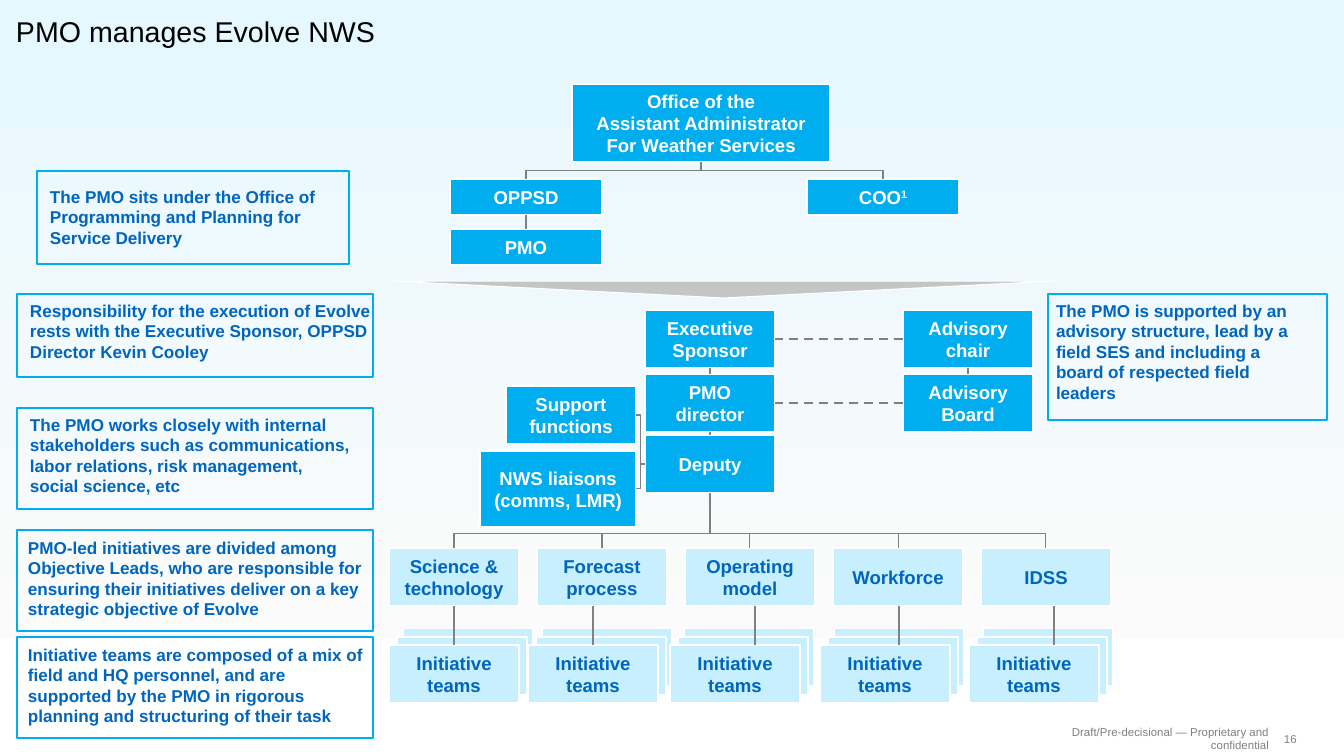
from lxml import etree
from pptx import Presentation
from pptx.dml.color import RGBColor
from pptx.enum.dml import MSO_LINE
from pptx.enum.shapes import MSO_CONNECTOR, MSO_SHAPE
from pptx.enum.text import MSO_ANCHOR, PP_ALIGN
from pptx.oxml.ns import qn
from pptx.util import Pt

RECTANGLE, TRIANGLE = MSO_SHAPE.RECTANGLE, MSO_SHAPE.ISOSCELES_TRIANGLE
STRAIGHT, ELBOW = MSO_CONNECTOR.STRAIGHT, MSO_CONNECTOR.ELBOW
LEFT, CENTER, RIGHT = PP_ALIGN.LEFT, PP_ALIGN.CENTER, PP_ALIGN.RIGHT
TOP, MIDDLE = MSO_ANCHOR.TOP, MSO_ANCHOR.MIDDLE
TOP_SIDE, LEFT_SIDE, BOTTOM_SIDE, RIGHT_SIDE = range(4)
EMU_PER_PX = 8895
BLUE, PALE, NAVY, GREY = "00ADEF", "C8EFFE", "0065BD", "808080"
WHITE, BLACK, SILVER = "FFFFFF", "000000", "C5C5C5"
BACKDROP_STOPS = ["FBFBFB", "E6F8FF"]

TITLE = "PMO manages Evolve NWS"
FOOTERS = [
    ("16", (1284, 732, 14, 13), LEFT),
    ("Draft/Pre-decisional — Proprietary and confidential", (1011, 732, 258, 13), RIGHT),
]
CALLOUTS = [
    ("The PMO sits under the Office of Programming and Planning for Service Delivery",
     (37, 171, 312, 93), (50, 186, 286, 65)),
    ("Responsibility for the execution of Evolve rests with the Executive Sponsor, "
     "OPPSD Director Kevin Cooley",
     (17, 294, 356, 83), (30, 300, 343, 65)),
    ("The PMO is supported by an advisory structure, lead by a field SES and including "
     "a board of respected field leaders",
     (1048, 294, 279, 126), (1056, 300, 255, 107)),
    ("The PMO works closely with internal stakeholders such as communications, labor "
     "relations, risk management, social science, etc",
     (17, 408, 356, 101), (30, 414, 325, 86)),
    ("PMO-led initiatives are divided among Objective Leads, who are responsible for "
     "ensuring their initiatives deliver on a key strategic objective of Evolve",
     (17, 530, 356, 101), (28, 537, 342, 86)),
    ("Initiative teams are composed of a mix of field and HQ personnel, and are supported "
     "by the PMO in rigorous planning and structuring of their task",
     (17, 637, 356, 101), (28, 644, 342, 86)),
]
NODE_WIDTH, NODE_HEIGHT = 130, 58
NODES = {
    "office": ("Office of the\nAssistant Administrator\nFor Weather Services", (572, 84, 258, 78)),
    "oppsd": ("OPPSD", (450, 179, 152, 36)),
    "coo": ("COO", (807, 179, 152, 36)),
    "pmo": ("PMO", (450, 229, 152, 36)),
    "sponsor": ("Executive Sponsor", (645, 310, NODE_WIDTH, NODE_HEIGHT)),
    "chair": ("Advisory chair", (903, 310, NODE_WIDTH, NODE_HEIGHT)),
    "director": ("PMO director", (645, 374, NODE_WIDTH, NODE_HEIGHT)),
    "board": ("Advisory Board", (903, 374, NODE_WIDTH, NODE_HEIGHT)),
    "deputy": ("Deputy", (645, 435, NODE_WIDTH, NODE_HEIGHT)),
    "support": ("Support functions", (506, 386, NODE_WIDTH, NODE_HEIGHT)),
    "liaisons": ("NWS liaisons (comms, LMR)", (480, 451, 156, 76)),
}
COO_MARK = "1"
DOWN_LINKS = [("oppsd", "pmo", 0.75), ("sponsor", "director", 1.5),
              ("director", "deputy", 1.5), ("chair", "board", 1.5)]
DASHED_LINKS = [("chair", "sponsor"), ("board", "director")]
OBJECTIVES = ["Science & technology", "Forecast process", "Operating model", "Workforce", "IDSS"]
OBJECTIVE_LEFT, OBJECTIVE_TOP, OBJECTIVE_STEP = 389, 548, 148
TEAM_LABEL = "Initiative teams"
TEAM_TOP = 645
TEAMS = [(389, 454), (528, 593), (670, 755), (820, 899), (969, 1054)]
STACK_OFFSETS = [(14, -17), (8, -8)]


def px(*lengths):
    return [round(length * EMU_PER_PX) for length in lengths]


def color(value):
    return RGBColor.from_string(value)


def apply(target, values):
    for name, value in values.items():
        setattr(target, name, value)


def format_run(run, size, ink, bold):
    apply(run.font, {"name": "Arial", "size": Pt(size), "bold": bold})
    run.font.color.rgb = color(ink)


def write(shape, text, size, ink, bold=False, align=LEFT, anchor=TOP, margin=0):
    frame = shape.text_frame
    inset = px(margin)[0]
    apply(frame, {"word_wrap": True, "vertical_anchor": anchor, "margin_left": inset,
                  "margin_right": inset, "margin_top": inset, "margin_bottom": inset})
    frame.text = text
    for paragraph in frame.paragraphs:
        paragraph.alignment = align
        for run in paragraph.runs:
            format_run(run, size, ink, bold)


def add_label(box, text, size, ink, **options):
    write(slide.shapes.add_textbox(*px(*box)), text, size, ink, **options)


def add_box(box, fill=None, line=WHITE, width=1, kind=RECTANGLE):
    shape = slide.shapes.add_shape(kind, *px(*box))
    shape.shadow.inherit = False
    if fill:
        shape.fill.solid()
        shape.fill.fore_color.rgb = color(fill)
    else:
        shape.fill.background()
    shape.line.color.rgb = color(line)
    shape.line.width = Pt(width)
    return shape


def add_node(box, text, fill, ink):
    shape = add_box(box, fill)
    write(shape, text, 13, ink, bold=True, align=CENTER, anchor=MIDDLE, margin=7)
    return shape


def add_line(kind, start, end, width):
    connector = slide.shapes.add_connector(kind, *px(*start, *end))
    connector.line.color.rgb = color(GREY)
    connector.line.width = Pt(width)
    etree.SubElement(connector._element.spPr, qn("a:effectLst"))
    return connector


def side(shape, index):
    x, y = shape.left + shape.width / 2, shape.top + shape.height / 2
    points = [(x, shape.top), (shape.left, y), (x, shape.top + shape.height),
              (shape.left + shape.width, y)]
    return tuple(value / EMU_PER_PX for value in points[index])


def join(first, first_side, second, second_side, width):
    connector = add_line(STRAIGHT, side(first, first_side), side(second, second_side), width)
    connector.begin_connect(first, first_side)
    connector.end_connect(second, second_side)
    return connector


def branch_down(parent, child, bend):
    (x1, y1), (x2, y2) = side(parent, BOTTOM_SIDE), side(child, TOP_SIDE)
    middle_x, middle_y = (x1 + x2) / 2, (y1 + y2) / 2
    reach, drop = abs(x2 - x1) / 2, (y2 - y1) / 2
    turn, rotation = (drop, 270) if x2 > x1 else (-drop, 90)
    connector = add_line(ELBOW, (middle_x + turn, middle_y - reach),
                         (middle_x - turn, middle_y + reach), 0.75)
    properties = connector._element.spPr
    properties.find(qn("a:xfrm")).set("rot", str(rotation * 60000))
    guides = properties.find(qn("a:prstGeom")).find(qn("a:avLst"))
    etree.SubElement(guides, qn("a:gd"), name="adj1", fmla=f"val {round(bend * 100000)}")


presentation = Presentation()
presentation.slide_width, presentation.slide_height = px(1344, 756)
slide = presentation.slides.add_slide(presentation.slide_layouts[6])

backdrop = add_box((0, 0, 1344, 639))
backdrop.line.fill.background()
backdrop.fill.gradient()
backdrop.fill.gradient_angle = 90
for stop, tint in zip(backdrop.fill.gradient_stops, BACKDROP_STOPS):
    stop.color.rgb = color(tint)

for text, box, align in FOOTERS:
    add_label(box, text, 8, GREY, align=align, anchor=MIDDLE)
add_label((6, 14, 1292, 35), TITLE, 20, BLACK, anchor=MIDDLE, margin=10)

divider = add_box((393, 281, 661, 17), SILVER, width=0.75, kind=TRIANGLE)
divider.rotation = 180
for text, frame_box, text_box in CALLOUTS:
    add_box(frame_box, line=BLUE, width=1.5)
    add_label(text_box, text, 12, NAVY, bold=True)

nodes = {key: add_node(box, text, BLUE, WHITE) for key, (text, box) in NODES.items()}
mark = nodes["coo"].text_frame.paragraphs[0].add_run()
mark.text = COO_MARK
format_run(mark, 13, WHITE, True)
mark.font._element.set("baseline", "30000")

for upper, lower, width in DOWN_LINKS:
    join(nodes[upper], BOTTOM_SIDE, nodes[lower], TOP_SIDE, width)
for adviser, lead in DASHED_LINKS:
    link = join(nodes[adviser], LEFT_SIDE, nodes[lead], RIGHT_SIDE, 1.5)
    link.line.dash_style = MSO_LINE.DASH
for key in ("oppsd", "coo"):
    branch_down(nodes["office"], nodes[key], 0.5)
for key in ("support", "liaisons"):
    add_line(ELBOW, side(nodes[key], RIGHT_SIDE), side(nodes["deputy"], LEFT_SIDE), 0.75)

for index, (name, (team_left, link_x)) in enumerate(zip(OBJECTIVES, TEAMS)):
    objective_left = OBJECTIVE_LEFT + index * OBJECTIVE_STEP
    objective = add_node((objective_left, OBJECTIVE_TOP, NODE_WIDTH, NODE_HEIGHT), name, PALE, NAVY)
    for shift_x, shift_y in STACK_OFFSETS:
        add_box((team_left + shift_x, TEAM_TOP + shift_y, NODE_WIDTH, NODE_HEIGHT), PALE)
    team = add_node((team_left, TEAM_TOP, NODE_WIDTH, NODE_HEIGHT), TEAM_LABEL, PALE, NAVY)
    link = add_line(STRAIGHT, (link_x, OBJECTIVE_TOP + NODE_HEIGHT), (link_x, TEAM_TOP), 1)
    if link_x == objective_left + NODE_WIDTH / 2:
        link.begin_connect(objective, BOTTOM_SIDE)
    if link_x == team_left + NODE_WIDTH / 2:
        link.end_connect(team, TOP_SIDE)
    branch_down(nodes["deputy"], objective, 0.74)

presentation.save("out.pptx")
